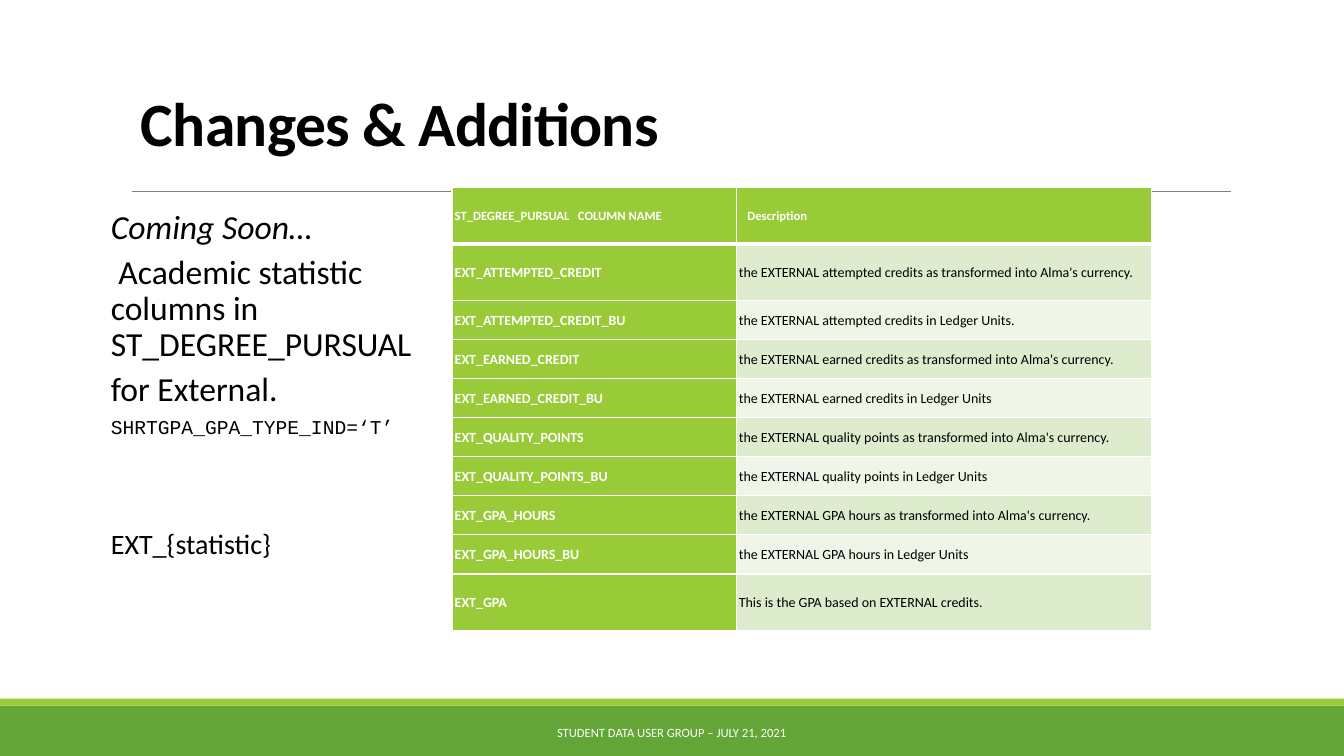
from lxml.etree import SubElement
from pptx import Presentation
from pptx.dml.color import RGBColor
from pptx.enum.shapes import MSO_CONNECTOR as Connector, MSO_SHAPE as Shape
from pptx.enum.text import MSO_ANCHOR as Anchor, PP_ALIGN as Align
from pptx.oxml.ns import qn
from pptx.util import Pt

WHITE, BLACK, GREY = "FFFFFF", "000000", "808080"
LIME, GREEN = "99CB38", "63A537"
BANDS = ("DEECCE", "EFF6E8")


def color(hex_code):
    return RGBColor.from_string(hex_code)


class SlideBuilder:
    font = "Calibri"

    def __init__(self, slide):
        self.slide = slide

    def format_paragraph(self, paragraph, size, hex_code=BLACK, bold=False, italic=False,
                         font=None, line=1.0, before=0, after=0, align=Align.LEFT):
        paragraph.alignment = align
        paragraph.line_spacing = line
        paragraph.space_before, paragraph.space_after = Pt(before), Pt(after)
        for run in paragraph.runs:
            run.font.name = font or self.font
            run.font.size = Pt(size)
            run.font.bold, run.font.italic = bold, italic
            run.font.color.rgb = color(hex_code)

    def bar(self, left, top, width, height, fill):
        shape = self.slide.shapes.add_shape(
            Shape.RECTANGLE, Pt(left), Pt(top), Pt(width), Pt(height))
        shape.shadow.inherit = False
        shape.fill.solid()
        shape.fill.fore_color.rgb = color(fill)
        shape.line.fill.background()

    def rule(self, x1, x2, y, hex_code, weight):
        connector = self.slide.shapes.add_connector(
            Connector.STRAIGHT, Pt(x1), Pt(y), Pt(x2), Pt(y))
        connector.line.color.rgb = color(hex_code)
        connector.line.width = Pt(weight)
        SubElement(connector._element.spPr, qn("a:effectLst"))

    def text(self, left, top, width, height, paragraphs, anchor=Anchor.TOP):
        """Add a text box; paragraphs holds pairs of text and format options."""
        box = self.slide.shapes.add_textbox(Pt(left), Pt(top), Pt(width), Pt(height))
        text_frame = box.text_frame
        text_frame.word_wrap = True
        text_frame.vertical_anchor = anchor
        text_frame.text = "\n".join(words for words, _ in paragraphs)
        for paragraph, (_, options) in zip(text_frame.paragraphs, paragraphs):
            self.format_paragraph(paragraph, **options)
        return text_frame

    def borders(self, cell, **weights):
        properties = cell._tc.get_or_add_tcPr()
        for side in "LRTB":
            line = SubElement(properties, qn("a:ln" + side),
                              w=str(Pt(weights.get(side, 1))))
            fill = SubElement(line, qn("a:solidFill"))
            SubElement(fill, qn("a:srgbClr"), val=WHITE)

    def cell(self, cell, words, fill, size, hex_code, bold, indent=0, **weights):
        self.borders(cell, **weights)
        cell.fill.solid()
        cell.fill.fore_color.rgb = color(fill)
        cell.vertical_anchor = Anchor.MIDDLE
        cell.margin_left = Pt(2 + indent)
        cell.margin_right = cell.margin_top = cell.margin_bottom = Pt(2)
        cell.text_frame.text = words
        self.format_paragraph(cell.text_frame.paragraphs[0], size, hex_code, bold,
                              line=1.07, before=3.8, after=3.8)

    def table(self, left, top, widths, heights, header, rows):
        table = self.slide.shapes.add_table(
            len(heights), len(widths), Pt(left), Pt(top),
            Pt(sum(widths)), Pt(sum(heights))).table
        table.horz_banding = False
        for column, width in zip(table.columns, widths):
            column.width = Pt(width)
        for row, height in zip(table.rows, heights):
            row.height = Pt(height)
        for index, (words, indent) in enumerate(header):
            self.cell(table.cell(0, index), words, LIME, 9, WHITE, True, indent, B=3)
        for index, (name, description) in enumerate(rows, 1):
            top_weight = 3 if index == 1 else 1
            self.cell(table.cell(index, 0), name, LIME, 10, WHITE, True, T=top_weight)
            self.cell(table.cell(index, 1), description, BANDS[(index - 1) % 2],
                      10, BLACK, False, T=top_weight)


def statistic_rows():
    """Each statistic has a converted column and a unit column; GPA stands alone."""
    rows = []
    for statistic in ("attempted credit", "earned credit", "quality points", "GPA hours"):
        name = "EXT_" + statistic.upper().replace(" ", "_")
        plural = statistic if statistic.endswith("s") else statistic + "s"
        stop = "." if statistic == "attempted credit" else ""
        rows.append((name, f"the EXTERNAL {plural} as transformed into Alma's currency."))
        rows.append((name + "_BU", f"the EXTERNAL {plural} in Ledger Units{stop}"))
    rows.append(("EXT_GPA", "This is the GPA based on EXTERNAL credits."))
    return rows


def main():
    presentation = Presentation()
    presentation.slide_width, presentation.slide_height = Pt(960), Pt(540)
    builder = SlideBuilder(presentation.slides.add_slide(presentation.slide_layouts[6]))

    # Footer bands and title rule
    builder.bar(0, 504, 960, 36, GREEN)
    builder.bar(0, 499, 960, 5, LIME)
    builder.rule(94.3, 879, 136.6, GREY, 0.5)
    builder.text(290, 509, 379.4, 28.8, [
        ("STUDENT DATA USER GROUP – JULY 21, 2021",
         dict(size=9, hex_code=WHITE, align=Align.CENTER))], Anchor.MIDDLE)

    # Title, with slightly tightened letters
    title = builder.text(93.6, 67, 885.6, 50.4, [
        ("Changes & Additions", dict(size=44, bold=True, line=0.85))], Anchor.BOTTOM)
    title.paragraphs[0].runs[0]._r.get_or_add_rPr().set("spc", "-50")

    # Explanation on the left
    body = dict(size=24, line=0.9, before=2, after=4)
    explanation = builder.text(56.2, 146.9, 251.3, 319.7, [
        ("Coming Soon…", body | dict(italic=True)),
        (" Academic statistic columns in ST_DEGREE_PURSUAL", body),
        ("for External.", body),
        ("SHRTGPA_GPA_TYPE_IND=‘T’", body | dict(size=14, font="Courier New")),
        ("EXT_{statistic}", body | dict(size=20, before=62)),
    ])
    explanation.margin_left = Pt(23)

    # Column descriptions
    tall, low = 40.4, 27.9
    builder.table(322.8, 133.9, (203, 296.7), [tall] * 2 + [low] * 7 + [tall],
                  (("ST_DEGREE_PURSUAL   COLUMN NAME", 0), ("Description", 6)),
                  statistic_rows())

    presentation.save("out.pptx")


if __name__ == "__main__":
    main()
